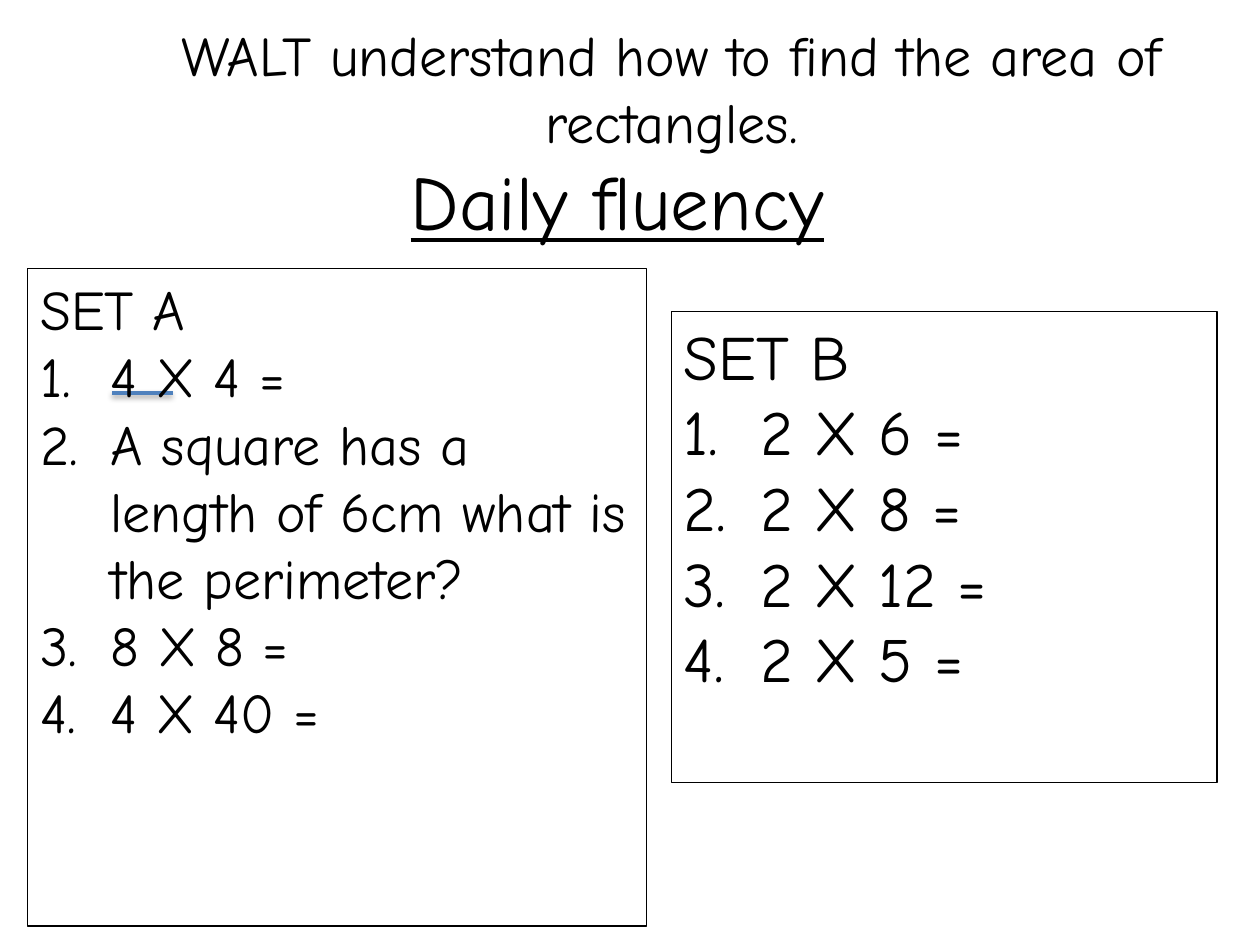
import dataclasses

import pptx
import pptx.dml.color
import pptx.enum.shapes
import pptx.enum.text
import pptx.oxml
import pptx.oxml.ns
import pptx.util
from pptx.util import Inches

FONT = "Comic Neue"
BLACK = "000000"
CENTER = pptx.enum.text.PP_ALIGN.CENTER
TOP = pptx.enum.text.MSO_ANCHOR.TOP
MIDDLE = pptx.enum.text.MSO_ANCHOR.MIDDLE


@dataclasses.dataclass
class QuestionSet:
    heading: str
    questions: list[str]
    box: tuple[float, float, float, float]
    size: int
    indent: float


SETS = [
    QuestionSet("SET B", ["2 X 6 =", "2 X 8 =", "2 X 12 =", "2 X 5 ="],
                (5.33, 2.47, 4.33, 3.74), 36, 0.61),
    QuestionSet("SET A", ["4 X 4 =",
                          "A square has a length of 6cm what is the perimeter?",
                          "8 X 8 =", "4 X 40 ="],
                (0.22, 2.13, 4.91, 5.22), 32, 0.56),
]


def color(value: str) -> pptx.dml.color.RGBColor:
    return pptx.dml.color.RGBColor.from_string(value)


def write(paragraph, text: str, size: int, alignment=None, underline=None) -> None:
    paragraph.text = text
    paragraph.alignment = alignment
    font = paragraph.runs[0].font
    formats = {"name": FONT, "size": pptx.util.Pt(size), "underline": underline}
    for name, value in formats.items():
        setattr(font, name, value)
    font.color.rgb = color(BLACK)


def set_frame(text_frame, anchor) -> None:
    formats = {"word_wrap": True, "vertical_anchor": anchor,
               "auto_size": pptx.enum.text.MSO_AUTO_SIZE.NONE}
    for name, value in formats.items():
        setattr(text_frame, name, value)


def number(paragraph, indent: float) -> None:
    """Give the paragraph an automatic number and a hanging indent."""
    properties = paragraph._p.get_or_add_pPr()
    properties.set("marL", str(Inches(indent)))
    properties.set("indent", str(-Inches(indent)))
    numbering = pptx.oxml.parse_xml(
        f'<a:buAutoNum {pptx.oxml.ns.nsdecls("a")} type="arabicPeriod"/>')
    properties.append(numbering)


def add_title(slide) -> None:
    title = slide.shapes.title
    box = {"left": 0.59, "top": 1.04, "width": 8.62, "height": 1.09}
    for name, value in box.items():
        setattr(title, name, Inches(value))
    set_frame(title.text_frame, MIDDLE)
    write(title.text_frame.paragraphs[0], "Daily fluency", 44, CENTER, True)


def add_question_set(slide, question_set: QuestionSet) -> None:
    shape = slide.shapes.add_shape(
        pptx.enum.shapes.MSO_SHAPE.RECTANGLE, *map(Inches, question_set.box))
    shape.shadow.inherit = False
    shape.fill.background()
    shape.line.color.rgb = color(BLACK)
    shape.line.width = pptx.util.Pt(0.75)
    set_frame(shape.text_frame, TOP)
    left = pptx.enum.text.PP_ALIGN.LEFT
    write(shape.text_frame.paragraphs[0], question_set.heading, question_set.size, left)
    for question in question_set.questions:
        paragraph = shape.text_frame.add_paragraph()
        number(paragraph, question_set.indent)
        write(paragraph, question, question_set.size, left)


def add_shadowed_line(slide, left: float, right: float, top: float) -> None:
    line = slide.shapes.add_connector(
        pptx.enum.shapes.MSO_CONNECTOR.STRAIGHT,
        Inches(left), Inches(top), Inches(right), Inches(top))
    line.line.color.rgb = color("4F81BD")
    line.line.width = pptx.util.Pt(2)
    line._element.spPr.append(pptx.oxml.parse_xml(
        f'<a:effectLst {pptx.oxml.ns.nsdecls("a")}>'
        '<a:outerShdw blurRad="40000" dist="20000" dir="5400000" rotWithShape="0">'
        f'<a:srgbClr val="{BLACK}"><a:alpha val="38000"/></a:srgbClr>'
        '</a:outerShdw></a:effectLst>'))


def add_objective(slide) -> None:
    objective = slide.shapes.add_textbox(*map(Inches, (1.09, 0.11, 8.48, 1.18)))
    set_frame(objective.text_frame, TOP)
    write(objective.text_frame.paragraphs[0],
          "WALT understand how to find the area of rectangles.", 32, CENTER)


def main() -> None:
    presentation = pptx.Presentation()
    presentation.slide_width = Inches(10)
    presentation.slide_height = Inches(7.5)
    slide = presentation.slides.add_slide(presentation.slide_layouts[5])
    add_title(slide)
    add_shadowed_line(slide, 0.89, 1.37, 3.12)
    for question_set in SETS:
        add_question_set(slide, question_set)
    add_objective(slide)
    presentation.save("out.pptx")


if __name__ == "__main__":
    main()
